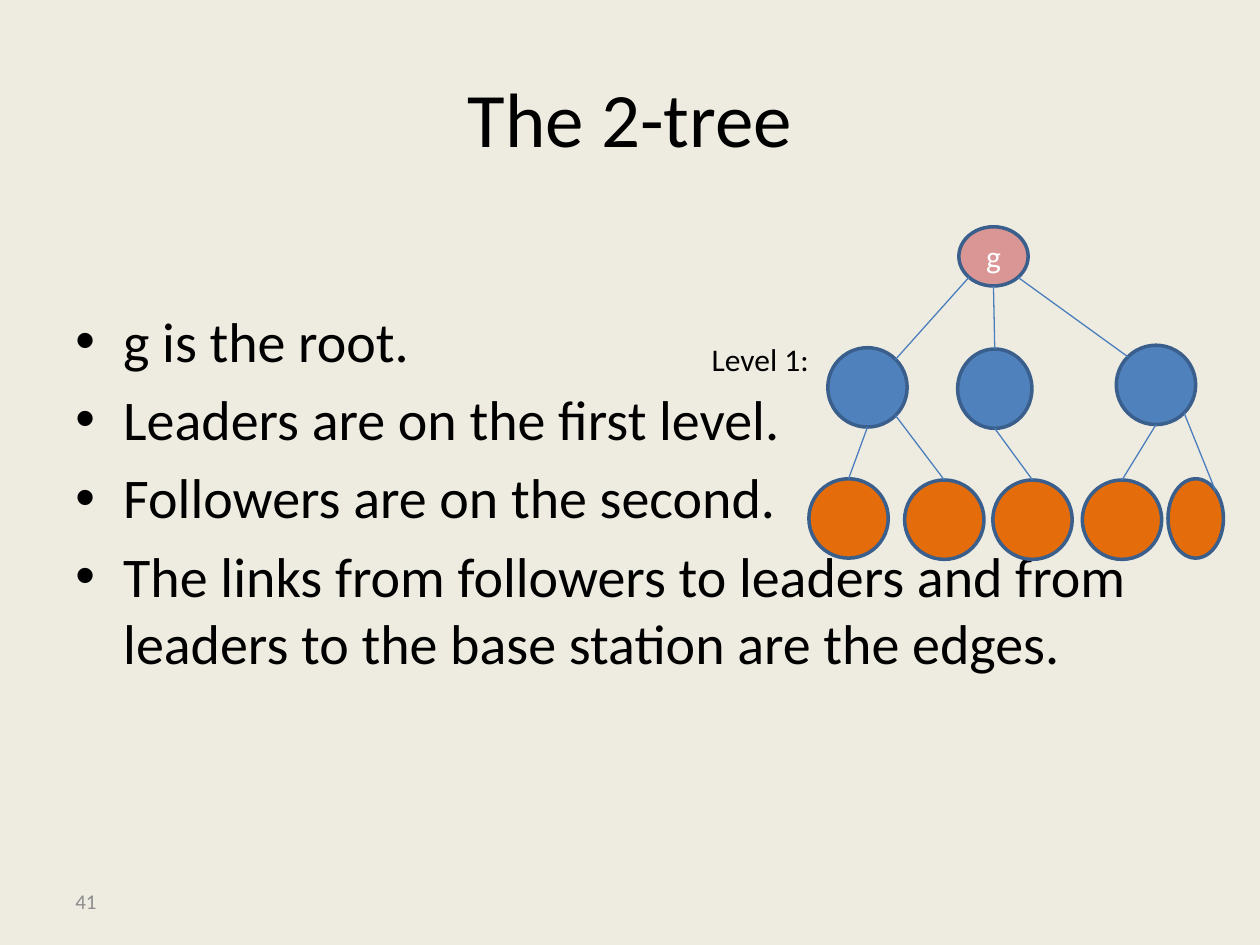
from dataclasses import dataclass
from math import cos, radians, sin

from lxml.etree import SubElement
from pptx import Presentation
from pptx.dml.color import RGBColor as RGB
from pptx.enum.shapes import MSO_CONNECTOR as CONNECTOR, MSO_SHAPE as SHAPE
from pptx.enum.text import MSO_ANCHOR as ANCHOR, MSO_AUTO_SIZE as AUTO_SIZE, PP_ALIGN as ALIGN
from pptx.oxml.ns import qn
from pptx.util import Inches, Pt


@dataclass(frozen=True)
class Theme:
    font: str = "Calibri"
    background: RGB = RGB(0xEE, 0xEC, 0xE1)
    text: RGB = RGB(0, 0, 0)
    root_text: RGB = RGB(0xFF, 0xFF, 0xFF)
    muted: RGB = RGB(0x8C, 0x8C, 0x8C)
    root: RGB = RGB(0xD9, 0x96, 0x94)
    leader: RGB = RGB(0x4F, 0x81, 0xBD)
    follower: RGB = RGB(0xE4, 0x6C, 0x0A)
    outline: RGB = RGB(0x3A, 0x5F, 0x8C)
    edge: RGB = RGB(0x4B, 0x7E, 0xBC)
    title_size: Pt = Pt(44)
    body_size: Pt = Pt(32)
    label_size: Pt = Pt(18)
    number_size: Pt = Pt(12)
    outline_width: Pt = Pt(2)
    edge_width: Pt = Pt(0.75)


THEME = Theme()

POINTS = [
    "g is the root.",
    "Leaders are on the first level.",
    "Followers are on the second.",
    "The links from followers to leaders and from leaders to the base station are the edges.",
]

NODES = {
    "root": (1.19, 0, 0.55, 0.47, THEME.root),
    "leader 1": (0.15, 0.96, 0.63, 0.63, THEME.leader),
    "leader 2": (1.18, 0.97, 0.59, 0.63, THEME.leader),
    "leader 3": (2.44, 0.94, 0.63, 0.63, THEME.leader),
    "follower 1": (0, 2, 0.63, 0.63, THEME.follower),
    "follower 2": (0.76, 2.01, 0.63, 0.63, THEME.follower),
    "follower 3": (1.46, 2.01, 0.63, 0.63, THEME.follower),
    "follower 4": (2.17, 2.01, 0.63, 0.63, THEME.follower),
    "follower 5": (2.85, 2, 0.44, 0.63, THEME.follower),
}

TOP, TOP_LEFT, BOTTOM_LEFT, BOTTOM, BOTTOM_RIGHT, TOP_RIGHT = 0, 1, 3, 4, 5, 7

EDGES = [
    ("root", BOTTOM_LEFT, "leader 1", TOP_RIGHT),
    ("root", BOTTOM, "leader 2", TOP),
    ("root", BOTTOM_RIGHT, "leader 3", TOP_LEFT),
    ("leader 1", BOTTOM, "follower 1", TOP),
    ("leader 1", BOTTOM_RIGHT, "follower 2", TOP),
    ("leader 2", BOTTOM, "follower 3", TOP),
    ("leader 3", BOTTOM, "follower 4", TOP),
    ("leader 3", BOTTOM_RIGHT, "follower 5", TOP_RIGHT),
]


def style(paragraph, size, color):
    paragraph.font.name = THEME.font
    paragraph.font.size = size
    paragraph.font.color.rgb = color


def add_text(slide, box, text, size, color, anchor=ANCHOR.TOP):
    frame = slide.shapes.add_textbox(*map(Inches, box)).text_frame
    frame.word_wrap = True
    frame.vertical_anchor = anchor
    frame.text = text
    for paragraph in frame.paragraphs:
        style(paragraph, size, color)
    return frame


def place_title(slide, box, text):
    title = slide.shapes.title
    title.left, title.top, title.width, title.height = map(Inches, box)
    frame = title.text_frame
    frame.text = text
    frame.vertical_anchor = ANCHOR.MIDDLE
    frame.paragraphs[0].alignment = ALIGN.CENTER
    style(frame.paragraphs[0], THEME.title_size, THEME.text)


def add_points(slide, box, points):
    frame = add_text(slide, box, "\n".join(points), THEME.body_size, THEME.text)
    for index, paragraph in enumerate(frame.paragraphs):
        paragraph.space_before = Pt(6.4 if index else 0)
        properties = paragraph._p.get_or_add_pPr()
        properties.set("marL", str(Inches(0.38)))
        properties.set("indent", str(Inches(-0.38)))
        SubElement(properties, qn("a:buFont"), typeface="Arial")
        SubElement(properties, qn("a:buChar"), char="•")


def add_node(slide, left, top, width, height, color):
    node = slide.shapes.add_shape(SHAPE.OVAL, *map(Inches, (left, top, width, height)))
    node.shadow.inherit = False
    node.fill.solid()
    node.fill.fore_color.rgb = color
    node.line.color.rgb = THEME.outline
    node.line.width = THEME.outline_width
    return node


def rim_point(node, site):
    angle = radians(90 + 45 * site)
    x = node.left + node.width / 2 * (1 + cos(angle))
    y = node.top + node.height / 2 * (1 - sin(angle))
    return round(x), round(y)


def add_edge(slide, parent, parent_site, child, child_site):
    edge = slide.shapes.add_connector(
        CONNECTOR.STRAIGHT, *rim_point(parent, parent_site), *rim_point(child, child_site)
    )
    if child_site == TOP:
        edge.end_connect(child, TOP)
    edge.line.color.rgb = THEME.edge
    edge.line.width = THEME.edge_width
    SubElement(edge._element.spPr, qn("a:effectLst"))


def add_tree(slide, left, top):
    nodes = {
        name: add_node(slide, left + x, top + y, width, height, color)
        for name, (x, y, width, height, color) in NODES.items()
    }
    root_label = nodes["root"].text_frame
    root_label.text = "g"
    root_label.vertical_anchor = ANCHOR.MIDDLE
    root_label.paragraphs[0].alignment = ALIGN.CENTER
    style(root_label.paragraphs[0], THEME.label_size, THEME.root_text)

    for parent, parent_site, child, child_site in EDGES:
        add_edge(slide, nodes[parent], parent_site, nodes[child], child_site)

    level_box = (left - 0.87, top + 0.85, 1.02, 0.4)
    level_label = add_text(slide, level_box, "Level 1:", THEME.label_size, THEME.text)
    level_label.auto_size = AUTO_SIZE.SHAPE_TO_FIT_TEXT


def main():
    deck = Presentation()
    deck.slide_width, deck.slide_height = Inches(10), Inches(7.5)
    slide = deck.slides.add_slide(deck.slide_layouts[5])
    slide.background.fill.solid()
    slide.background.fill.fore_color.rgb = THEME.background

    place_title(slide, (0.5, 0.3, 9, 1.25), "The 2-tree")
    add_points(slide, (0.5, 2.38, 9, 4.32), POINTS)
    add_tree(slide, 6.42, 1.8)
    add_text(slide, (0.5, 6.95, 2.33, 0.4), "41", THEME.number_size, THEME.muted, ANCHOR.MIDDLE)
    deck.save("out.pptx")


if __name__ == "__main__":
    main()
